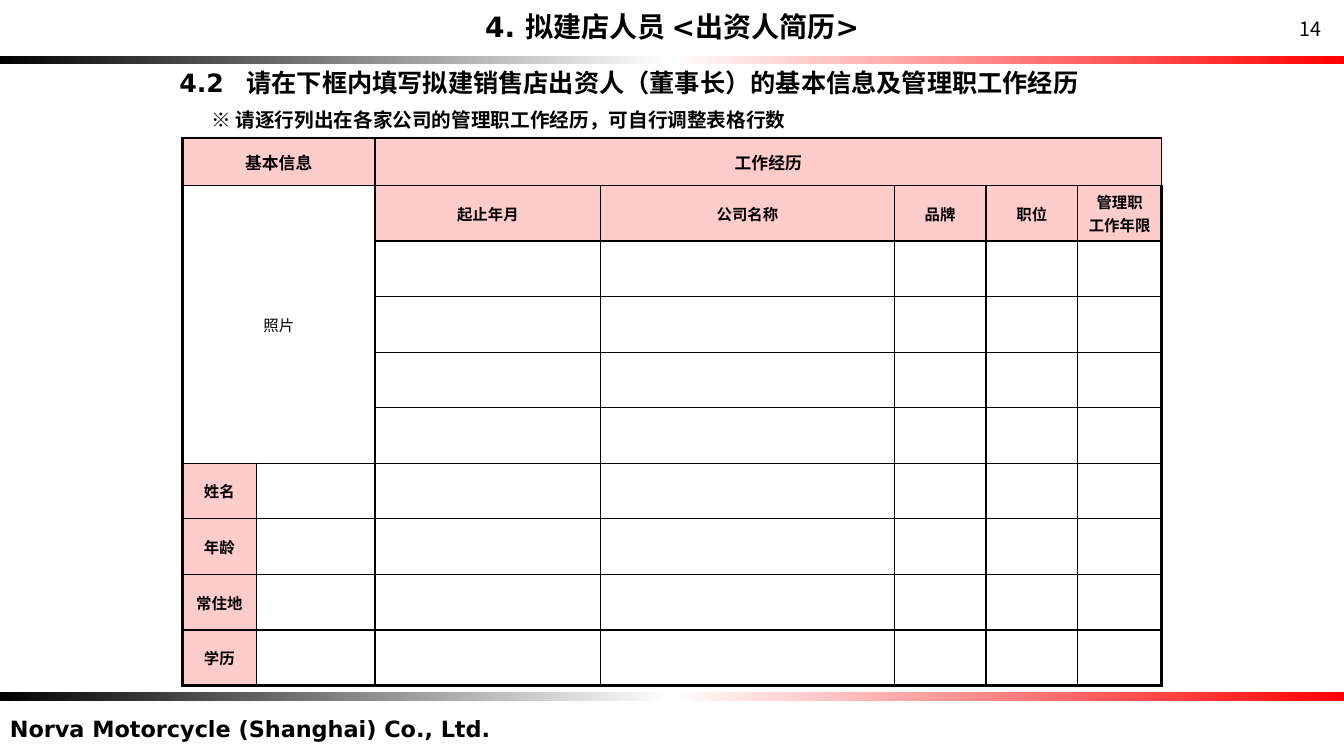
from lxml import etree
from pptx import Presentation
from pptx.dml.color import RGBColor
from pptx.enum.lang import MSO_LANGUAGE_ID
from pptx.enum.shapes import MSO_SHAPE
from pptx.enum.text import MSO_ANCHOR, MSO_AUTO_SIZE, PP_ALIGN
from pptx.oxml.ns import qn
from pptx.util import Inches, Pt

BLACK = RGBColor(0x00, 0x00, 0x00)
WHITE = RGBColor(0xFF, 0xFF, 0xFF)
RED = RGBColor(0xFF, 0x00, 0x00)
PINK = RGBColor(0xFF, 0xCC, 0xCC)
LEFT, CENTER = PP_ALIGN.LEFT, PP_ALIGN.CENTER
TOP, MIDDLE = MSO_ANCHOR.TOP, MSO_ANCHOR.MIDDLE
FIXED, GROW = MSO_AUTO_SIZE.NONE, MSO_AUTO_SIZE.SHAPE_TO_FIT_TEXT
RECTANGLE = MSO_SHAPE.RECTANGLE
CHINESE = MSO_LANGUAGE_ID.SIMPLIFIED_CHINESE
MAIN_FONT, NUMBER_FONT = "DejaVu Sans", "Noto Sans CJK JP"
THIN, THICK = Pt(1), Pt(2.25)

presentation = Presentation()
presentation.slide_width = Inches(13.33)
presentation.slide_height = Inches(7.5)
slide = presentation.slides.add_slide(presentation.slide_layouts[6])
across = presentation.slide_width / 100
down = presentation.slide_height / 100


def place(left, top, width, height):
    return int(left * across), int(top * down), int(width * across), int(height * down)


def add_text(paragraph, text, size, bold, alignment, font_name=MAIN_FONT):
    paragraph.alignment = alignment
    run = paragraph.add_run()
    run.text = text
    run.font.name = font_name
    run.font.size = Pt(size)
    run.font.bold = bold
    run.font.color.rgb = BLACK
    run.font.language_id = CHINESE


for left, top in [(-0.38, 7.47), (-0.3, 91.6)]:
    bar = slide.shapes.add_shape(RECTANGLE, *place(left, top, 100.45, 1.07))
    bar.shadow.inherit = False
    bar.line.fill.background()
    bar.fill.gradient()
    bar.fill.gradient_angle = 0
    stops = bar.fill._fill._gradFill.find(qn("a:gsLst"))
    for stop in list(stops):
        stops.remove(stop)
    for position, color in [(0, BLACK), (50, WHITE), (100, RED)]:
        stop = etree.SubElement(stops, qn("a:gs"), pos=str(position * 1000))
        etree.SubElement(stop, qn("a:srgbClr"), val=str(color))

text_boxes = [
    ((0, 94, 55.44, 4.93), "Norva Motorcycle (Shanghai) Co., Ltd.", 16, True, LEFT, TOP, GROW, MAIN_FONT),
    ((95.05, 1.6, 4.95, 4.53), "14", 14, False, CENTER, TOP, GROW, NUMBER_FONT),
    ((28.58, 1.33, 42.84, 4.4), "4. 拟建店人员 <出资人简历>", 20, True, CENTER, MIDDLE, FIXED, MAIN_FONT),
    ((12.6, 8.27, 70.59, 5.33), "4.2\t请在下框内填写拟建销售店出资人（董事长）的基本信息及管理职工作经历",
     18, True, LEFT, MIDDLE, GROW, MAIN_FONT),
    ((15, 13.6, 44.71, 4.53), "※ 请逐行列出在各家公司的管理职工作经历，可自行调整表格行数",
     14, True, LEFT, MIDDLE, GROW, MAIN_FONT),
]
for area, text, size, bold, alignment, anchor, auto_size, font_name in text_boxes:
    frame = slide.shapes.add_textbox(*place(*area)).text_frame
    frame.word_wrap = True
    frame.auto_size = auto_size
    frame.vertical_anchor = anchor
    paragraph = frame.paragraphs[0]
    if "\t" in text:
        tabs = etree.SubElement(paragraph._p.get_or_add_pPr(), qn("a:tabLst"))
        etree.SubElement(tabs, qn("a:tab"), pos=str(int(5 * across)), algn="l")
    add_text(paragraph, text, size, bold, alignment, font_name)

column_shares = [5.48, 8.85, 16.8, 21.83, 6.83, 6.83, 6.23]
row_shares = [6.27] + [7.35] * 9
last_row, last_column = len(row_shares) - 1, len(column_shares) - 1
table_area = place(13.58, 18.27, sum(column_shares), sum(row_shares))
table_shape = slide.shapes.add_table(len(row_shares), len(column_shares), *table_area)
table = table_shape.table
table.first_row = False
table.horz_banding = False
for column, share in zip(table.columns, column_shares):
    column.width = int(share * across)
for row, share in zip(table.rows, row_shares):
    row.height = int(share * down)

for first, last in [((0, 0), (0, 1)), ((0, 2), (0, last_column)), ((1, 0), (5, 1))]:
    table.cell(*first).merge(table.cell(*last))

labels = {(0, 0): "基本信息", (0, 2): "工作经历", (1, 0): "照片"}
for column_index, text in enumerate(["起止年月", "公司名称", "品牌", "职位", "管理职\n工作年限"], 2):
    labels[1, column_index] = text
for row_index, text in enumerate(["姓名", "年龄", "常住地", "学历"], 6):
    labels[row_index, 0] = text

for row_index in range(last_row + 1):
    for column_index in range(last_column + 1):
        cell = table.cell(row_index, column_index)
        cell.vertical_anchor = MIDDLE
        cell.margin_left = cell.margin_right = Inches(0.02)
        cell.margin_top = cell.margin_bottom = Inches(0.02)
        outer_edges = {
            "a:lnL": column_index == 0,
            "a:lnR": column_index == last_column,
            "a:lnT": row_index == 0,
            "a:lnB": row_index == last_row,
        }
        properties = cell._tc.get_or_add_tcPr()
        for edge, is_outer in outer_edges.items():
            border = etree.SubElement(properties, qn(edge), w=str(THICK if is_outer else THIN))
            border_fill = etree.SubElement(border, qn("a:solidFill"))
            etree.SubElement(border_fill, qn("a:srgbClr"), val=str(BLACK))
        text = labels.get((row_index, column_index))
        is_photo = text == "照片"
        if text and not is_photo:
            cell.fill.solid()
            cell.fill.fore_color.rgb = PINK
        else:
            cell.fill.background()
        if text:
            frame = cell.text_frame
            for line_index, line in enumerate(text.split("\n")):
                paragraph = frame.add_paragraph() if line_index else frame.paragraphs[0]
                add_text(paragraph, line, 11 if row_index else 12, not is_photo, CENTER)

presentation.save("out.pptx")
